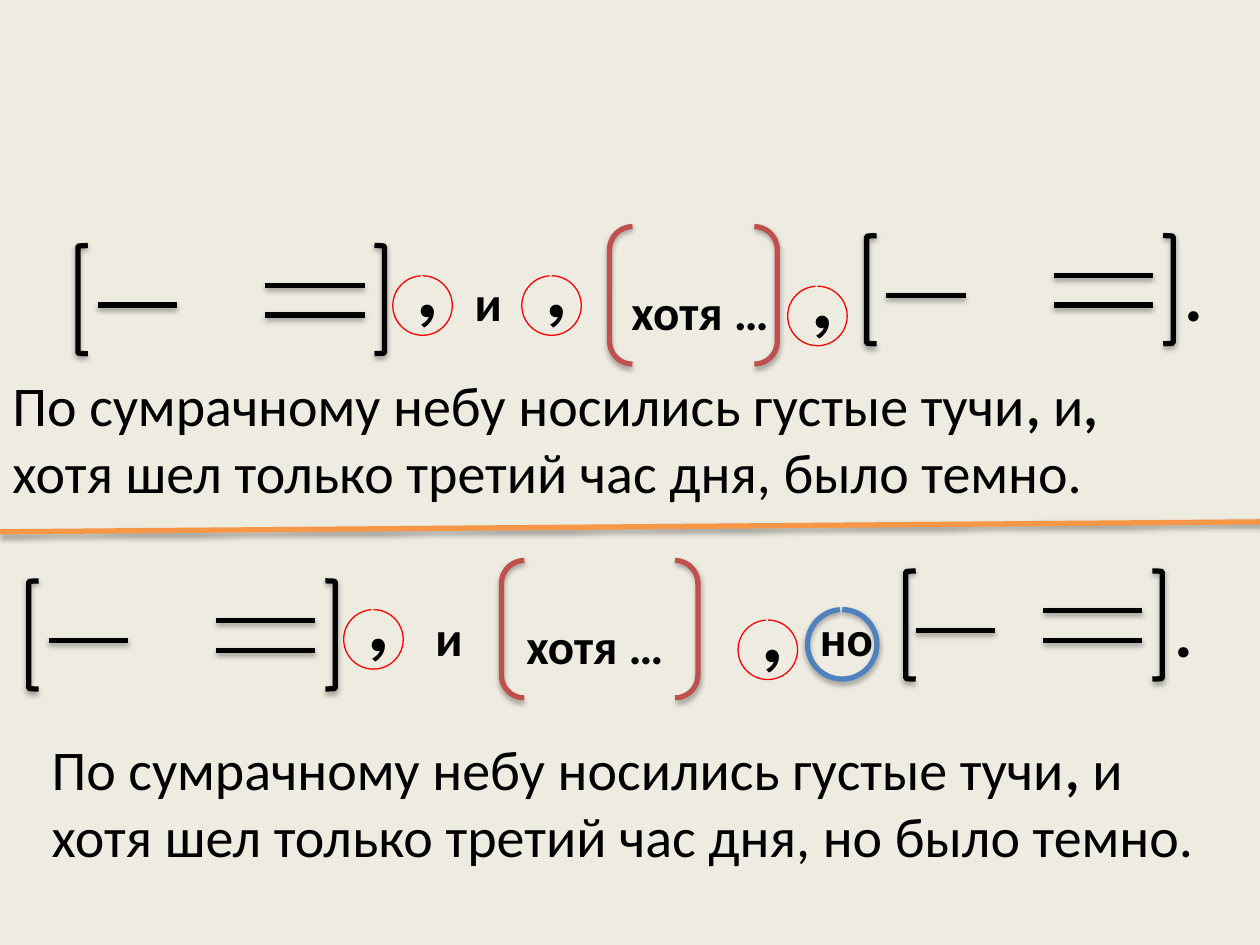
from dataclasses import dataclass

import pptx
import pptx.dml.color
import pptx.enum.shapes
import pptx.enum.text
import pptx.oxml
import pptx.oxml.ns
import pptx.util
from pptx.dml.color import RGBColor
from pptx.enum.shapes import MSO_SHAPE
from pptx.util import Cm

BLACK = RGBColor(0x00, 0x00, 0x00)
RED = RGBColor(0xFF, 0x00, 0x00)
BRICK = RGBColor(0xC0, 0x50, 0x4D)
BLUE = RGBColor(0x4F, 0x81, 0xBD)
ORANGE = RGBColor(0xF7, 0x96, 0x46)
CREAM = RGBColor(0xEE, 0xEC, 0xE1)

BODY_FONT = "Calibri"
COMMA_FONT = "League Spartan"
ARC_START = 162
ARC_END = 159.68
COMMA_RING = 1.2

SHADOW_XML = (
    f'<a:effectLst {pptx.oxml.ns.nsdecls("a")}>'
    '<a:outerShdw blurRad="40000" dist="23000" dir="5400000" rotWithShape="0">'
    '<a:srgbClr val="000000"><a:alpha val="35000"/></a:srgbClr>'
    "</a:outerShdw></a:effectLst>"
)


@dataclass
class Clause:
    """A main clause in square brackets; offsets run from its left edge, in cm."""
    left: float
    top: float
    subject: float = 0.4
    predicate: float = 3.78


@dataclass
class Label:
    text: str
    left: float
    top: float
    width: float
    height: float = 1.45
    size: int = 28
    font: str = BODY_FONT
    bold: bool = True
    wrap: bool = True


@dataclass
class Scheme:
    clauses: list[Clause]
    commas: list[tuple[float, float]]
    subordinate: tuple[float, float, float, float]
    labels: list[Label]
    sentence: Label


SCHEMES = [
    Scheme(
        clauses=[Clause(1.57, 4.95), Clause(17.47, 4.75)],
        commas=[(7.92, 5.56), (10.52, 5.56), (15.88, 5.77)],
        subordinate=(12.29, 4.57, 3.38, 2.77),
        labels=[
            Label("и", 9.32, 5.36, 0.79),
            Label("хотя …", 12.48, 5.56, 4),
            Label(".", 23.62, 4.95, 0.89, 1.96, size=40, wrap=False),
        ],
        sentence=Label(
            "По сумрачному небу носились густые тучи|,| и|,|"
            " хотя шел только третий час дня, было темно.",
            0, 7.34, 23.22, 3, size=32, bold=False),
    ),
    Scheme(
        clauses=[Clause(0.58, 11.71),
                 Clause(18.26, 11.51, subject=0.2, predicate=2.77)],
        commas=[(6.93, 12.29), (14.88, 12.5)],
        subordinate=(10.11, 11.3, 3.96, 2.77),
        labels=[
            Label("и", 8.53, 12.12, 1.19),
            Label("хотя …", 10.36, 12.29, 4),
            Label("но", 16.28, 12.12, 1.78),
            Label(".", 23.42, 11.71, 0.89, 1.96, size=40, wrap=False),
        ],
        sentence=Label(
            "По сумрачному небу носились густые тучи|,|"
            " и хотя шел только третий час дня, но было темно.",
            0.79, 14.68, 24.21, 3, size=32, bold=False),
    ),
]


def add_shadow(shape) -> None:
    properties = shape._element.spPr
    for effects in properties.findall(pptx.oxml.ns.qn("a:effectLst")):
        properties.remove(effects)
    properties.append(pptx.oxml.parse_xml(SHADOW_XML))


def add_stroke(slide, x1: float, y1: float, x2: float, y2: float,
               color: RGBColor = BLACK) -> None:
    stroke = slide.shapes.add_connector(
        pptx.enum.shapes.MSO_CONNECTOR.STRAIGHT, Cm(x1), Cm(y1), Cm(x2), Cm(y2))
    stroke.line.color.rgb = color
    stroke.line.width = pptx.util.Pt(3)
    add_shadow(stroke)


def add_outline(slide, kind: MSO_SHAPE, left: float, top: float, width: float,
                height: float, color: RGBColor, weight: float = 3):
    """Add an unfilled shape; heavy outlines cast a shadow."""
    outline = slide.shapes.add_shape(kind, Cm(left), Cm(top), Cm(width), Cm(height))
    outline.shadow.inherit = False
    outline.fill.background()
    outline.line.color.rgb = color
    outline.line.width = pptx.util.Pt(weight)
    if weight > 1:
        add_shadow(outline)
    return outline


def add_ring(slide, left: float, top: float, diameter: float, color: RGBColor,
             weight: float) -> None:
    ring = add_outline(slide, MSO_SHAPE.ARC, left, top, diameter, diameter,
                       color, weight)
    ring.adjustments[0] = ARC_START
    ring.adjustments[1] = ARC_END


def add_label(slide, label: Label) -> None:
    """Add text; each | in it switches bold on or off."""
    box = slide.shapes.add_textbox(
        Cm(label.left), Cm(label.top), Cm(label.width), Cm(label.height))
    frame = box.text_frame
    frame.word_wrap = label.wrap
    frame.auto_size = pptx.enum.text.MSO_AUTO_SIZE.SHAPE_TO_FIT_TEXT
    for index, part in enumerate(label.text.split("|")):
        run = frame.paragraphs[0].add_run()
        run.text = part
        run.font.name = label.font
        run.font.size = pptx.util.Pt(label.size)
        run.font.bold = label.bold != (index % 2 == 1)
        run.font.color.rgb = BLACK


def add_clause(slide, clause: Clause) -> None:
    subject = clause.left + clause.subject
    predicate = clause.left + clause.predicate
    add_stroke(slide, subject, clause.top + 1.2, subject + 1.6, clause.top + 1.2)
    for drop in (0.8, 1.4):
        add_stroke(slide, predicate, clause.top + drop,
                   predicate + 2, clause.top + drop)
    for left, rotation in ((clause.left, 180), (predicate + 2.2, 0)):
        bracket = add_outline(slide, MSO_SHAPE.RIGHT_BRACKET, left, clause.top,
                              0.2, 2.18, BLACK)
        bracket.rotation = rotation


def add_comma(slide, left: float, top: float) -> None:
    add_ring(slide, left, top, COMMA_RING, RED, 0.75)
    add_label(slide, Label(",", left + 0.2, top - 1.2, 1.1, 2.57, size=54,
                           font=COMMA_FONT, bold=False))


def add_scheme(slide, scheme: Scheme) -> None:
    for clause in scheme.clauses:
        add_clause(slide, clause)
    add_outline(slide, MSO_SHAPE.DOUBLE_BRACKET, *scheme.subordinate, BRICK)
    for left, top in scheme.commas:
        add_comma(slide, left, top)
    for label in scheme.labels:
        add_label(slide, label)
    add_label(slide, scheme.sentence)


def main() -> None:
    presentation = pptx.Presentation()
    presentation.slide_width = Cm(25.4)
    presentation.slide_height = Cm(19.05)
    slide = presentation.slides.add_slide(presentation.slide_layouts[6])
    slide.background.fill.solid()
    slide.background.fill.fore_color.rgb = CREAM

    for scheme in SCHEMES:
        add_scheme(slide, scheme)
    add_ring(slide, 16.28, 12.29, 1.4, BLUE, 3)
    add_stroke(slide, 0, 10.72, 25.4, 10.52, ORANGE)

    presentation.save("out.pptx")


if __name__ == "__main__":
    main()
